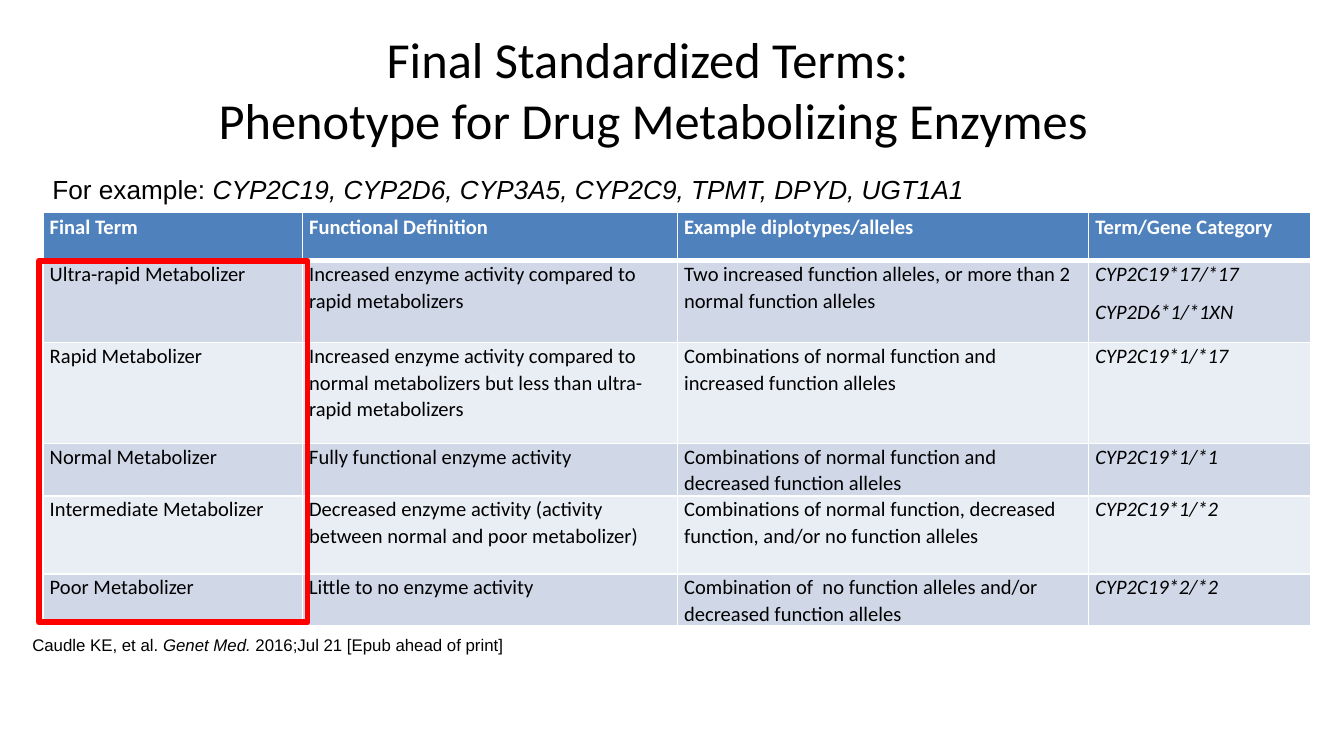
import pptx
import pptx.dml.color
import pptx.enum.shapes
import pptx.enum.text
import pptx.oxml.ns
import pptx.util
from lxml import etree

Inches = pptx.util.Inches
Pt = pptx.util.Pt

COLUMN_WIDTHS = [1.93, 2.79, 3.06, 1.65]
ROW_HEIGHTS = [0.36, 0.61, 0.75, 0.39, 0.58, 0.39]
PHENOTYPES = [
    ["Final Term", "Functional Definition", "Example diplotypes/alleles", "Term/Gene Category"],
    ["Ultra-rapid Metabolizer", "Increased enzyme activity compared to rapid metabolizers",
     "Two increased function alleles, or more than 2 normal function alleles",
     "CYP2C19*17/*17\nCYP2D6*1/*1XN"],
    ["Rapid Metabolizer",
     "Increased enzyme activity compared to normal metabolizers but less than ultra-rapid metabolizers",
     "Combinations of normal function and  increased function alleles", "CYP2C19*1/*17"],
    ["Normal Metabolizer", "Fully functional enzyme activity",
     "Combinations of normal function and decreased function alleles", "CYP2C19*1/*1"],
    ["Intermediate Metabolizer",
     "Decreased enzyme activity (activity between normal and poor metabolizer)",
     "Combinations of normal function, decreased function, and/or no function alleles",
     "CYP2C19*1/*2"],
    ["Poor Metabolizer", "Little to no enzyme activity",
     "Combination of  no function alleles and/or decreased function alleles", "CYP2C19*2/*2"],
]


def rgb(value):
    """Return the colour for a hex string."""
    return pptx.dml.color.RGBColor.from_string(value)


def add_text(paragraph, text, size, font="Calibri", color="000000", bold=False, italic=False):
    """Append formatted text to a paragraph, breaking lines at newlines."""
    for index, line in enumerate(text.split("\n")):
        if index:
            paragraph.add_line_break()
        run = paragraph.add_run()
        run.text = line
        run.font.size = Pt(size)
        run.font.name = font
        run.font.bold = bold
        run.font.italic = italic
        run.font.color.rgb = rgb(color)


def set_insets(frame):
    """Give a text frame the slide's common margins."""
    frame.margin_left = frame.margin_right = Inches(0.07)
    frame.margin_top = frame.margin_bottom = Inches(0.04)


def add_title(slide, left, top, width, height):
    """Place and format the title."""
    title = slide.shapes.title
    title.left, title.top = Inches(left), Inches(top)
    title.width, title.height = Inches(width), Inches(height)
    frame = title.text_frame
    set_insets(frame)
    frame.word_wrap = True
    frame.vertical_anchor = pptx.enum.text.MSO_ANCHOR.MIDDLE
    heading = frame.paragraphs[0]
    heading.alignment = pptx.enum.text.PP_ALIGN.CENTER
    add_text(heading, "Final Standardized Terms: \nPhenotype for Drug Metabolizing Enzymes", 27)


def add_caption(slide, left, top, width, height, parts, size, wrap=True, space_before=0):
    """Add a line of Arial text from (text, italic) parts."""
    caption = slide.shapes.add_textbox(Inches(left), Inches(top), Inches(width), Inches(height))
    frame = caption.text_frame
    set_insets(frame)
    frame.word_wrap = wrap
    frame.auto_size = pptx.enum.text.MSO_AUTO_SIZE.SHAPE_TO_FIT_TEXT
    frame.paragraphs[0].space_before = Pt(space_before)
    for text, italic in parts:
        add_text(frame.paragraphs[0], text, size, font="Arial", italic=italic)


def set_borders(cell, top, bottom):
    """Draw white cell borders, one point wide at the sides."""
    properties = cell._tc.get_or_add_tcPr()
    for side, width in (("L", 1), ("R", 1), ("T", top), ("B", bottom)):
        line = etree.SubElement(properties, pptx.oxml.ns.qn(f"a:ln{side}"), w=str(Pt(width)))
        fill = etree.SubElement(line, pptx.oxml.ns.qn("a:solidFill"))
        etree.SubElement(fill, pptx.oxml.ns.qn("a:srgbClr"), val="FFFFFF")


def fill_cell(cell, text, row, column):
    """Format one cell by its row and column and write its text."""
    header = row == 0
    set_borders(cell, top=3 if row == 1 else 1, bottom=3 if header else 1)
    cell.fill.solid()
    cell.fill.fore_color.rgb = rgb("4F81BD" if header else "D0D8E8" if row % 2 else "E9EDF4")
    cell.margin_left = cell.margin_right = Inches(0.05)
    cell.margin_top = Inches(0.01 if header else 0)
    cell.margin_bottom = 0
    frame = cell.text_frame
    for index, line in enumerate(text.split("\n")):
        paragraph = frame.add_paragraph() if index else frame.paragraphs[0]
        paragraph.line_spacing = 1.05
        paragraph.space_before = Pt(6)
        add_text(paragraph, line, 11, color="FFFFFF" if header else "000000",
                 bold=header, italic=not header and column == 3)


def add_phenotype_table(slide, left, top, width, height):
    """Add the phenotype table and the red frame around its terms."""
    table = slide.shapes.add_table(len(ROW_HEIGHTS), len(COLUMN_WIDTHS), Inches(left),
                                   Inches(top), Inches(width), Inches(height)).table
    for column, column_width in zip(table.columns, COLUMN_WIDTHS):
        column.width = Inches(column_width)
    for row, row_height in zip(table.rows, ROW_HEIGHTS):
        row.height = Inches(row_height)
    for row, texts in enumerate(PHENOTYPES):
        for column, text in enumerate(texts):
            fill_cell(table.cell(row, column), text, row, column)

    term_frame = slide.shapes.add_shape(
        pptx.enum.shapes.MSO_SHAPE.RECTANGLE, Inches(left - 0.03),
        Inches(top + ROW_HEIGHTS[0]), Inches(2), Inches(2.69))
    term_frame.shadow.inherit = False
    term_frame.fill.background()
    term_frame.line.color.rgb = rgb("FF0000")
    term_frame.line.width = Pt(3)


def main():
    """Build and save a 16:9 slide."""
    presentation = pptx.Presentation()
    presentation.slide_width = Inches(10)
    presentation.slide_height = Inches(10 * 9 / 16)
    slide = presentation.slides.add_slide(presentation.slide_layouts.get_by_name("Title Only"))
    add_title(slide, 0.02, 0.25, 9.68, 0.82)
    add_caption(slide, 0.32, 1.25, 7.11, 0.32,
                [("For example: ", False),
                 ("CYP2C19, CYP2D6, CYP3A5, CYP2C9, TPMT, DPYD, UGT1A1", True)],
                14, wrap=False)
    add_phenotype_table(slide, 0.32, 1.58, 9.43, 3.08)
    add_caption(slide, 0.17, 4.68, 7.01, 0.23,
                [("Caudle KE, et al. ", False), ("Genet Med.", True),
                 (" 2016;Jul 21 [Epub ahead of print]", False)],
                9, space_before=1.8)
    presentation.save("out.pptx")


if __name__ == "__main__":
    main()
